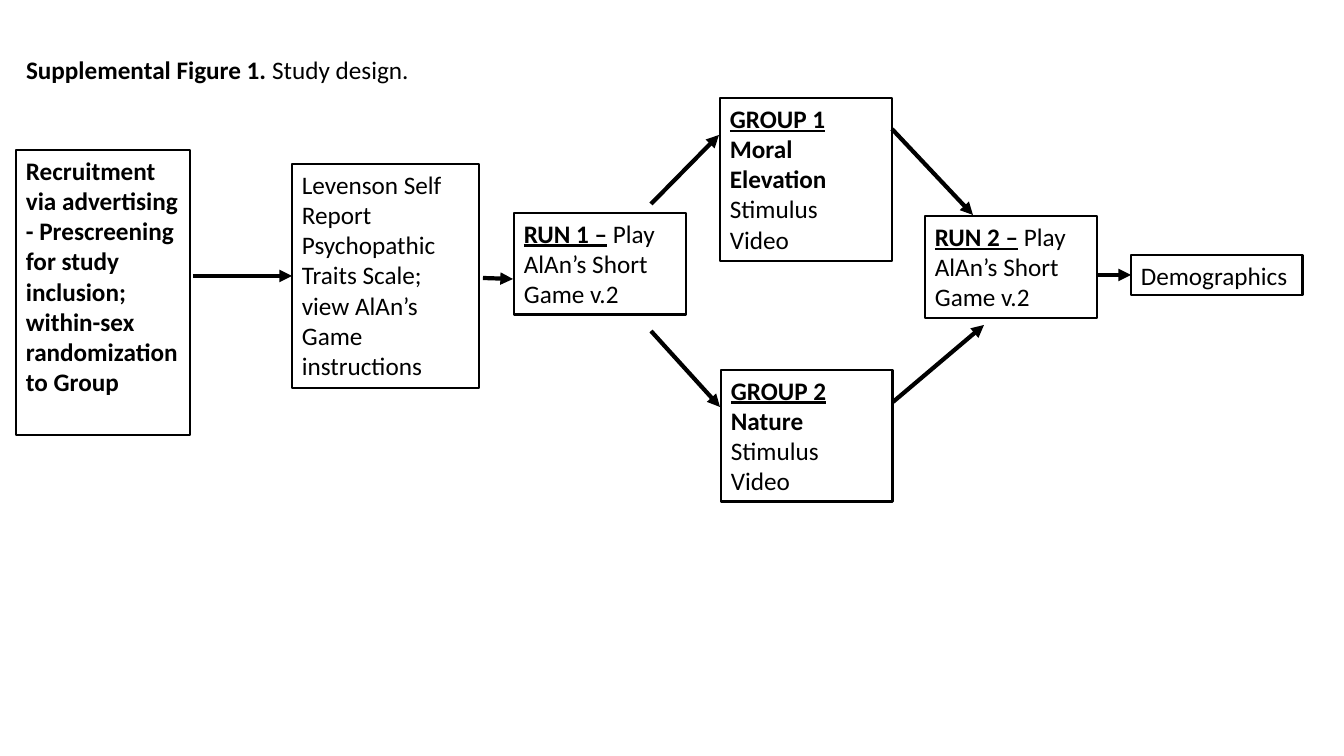
from lxml.etree import SubElement
from pptx import Presentation
from pptx.dml.color import RGBColor
from pptx.enum.shapes import MSO_CONNECTOR as CONN, MSO_SHAPE as SHAPE
from pptx.enum.text import MSO_ANCHOR as ANCHOR, PP_ALIGN as ALIGN
from pptx.oxml.ns import qn
from pptx.util import Pt

PX = 12192000 / 1344
BLACK = "000000"
BOLD = {"bold": True}
HEAD = {"bold": True, "underline": True}
PLAIN = {"bold": False}


def color(value):
    return RGBColor.from_string(value)


def write(sp, paragraphs, anchor):
    tf = sp.text_frame
    for name, value in {"word_wrap": True, "vertical_anchor": anchor}.items():
        setattr(tf, name, value)
    for i, runs in enumerate(paragraphs):
        p = tf.add_paragraph() if i else tf.paragraphs[0]
        p.alignment = ALIGN.LEFT
        for text, style in runs:
            r = p.add_run()
            r.text = text
            for name, value in {"name": "Calibri", "size": Pt(18), **style}.items():
                setattr(r.font, name, value)
            r.font.color.rgb = color(BLACK)


prs = Presentation()
prs.slide_width, prs.slide_height = round(1344 * PX), round(756 * PX)
s = prs.slides.add_slide(prs.slide_layouts[5])

title = s.shapes.title
place = {"left": 16, "top": -4, "width": 1123, "height": 146}
for name, value in place.items():
    setattr(title, name, round(value * PX))
write(title, [[("Supplemental Figure 1. ", BOLD), ("Study design.", PLAIN)]], ANCHOR.MIDDLE)

game = (" Play AlAn’s Short Game v.2", PLAIN)
video = ("Stimulus Video", PLAIN)
steps = {
    "recruitment": ((16, 150, 174, 285), [[(
        "Recruitment via advertising - Prescreening for study inclusion; "
        "within-sex randomization to Group", BOLD)]]),
    "scale": ((292, 164, 187, 224), [[(
        "Levenson Self Report Psychopathic Traits Scale; "
        "view AlAn’s Game instructions", PLAIN)]]),
    "run 1": ((514, 213, 172, 102), [[("RUN 1 –", HEAD), game]]),
    "group 1": ((720, 98, 172, 163), [[("GROUP 1", HEAD)], [("Moral Elevation ", BOLD), video]]),
    "group 2": ((721, 370, 172, 132), [[("GROUP 2", HEAD)], [("Nature ", BOLD), video]]),
    "run 2": ((925, 216, 172, 102), [[("RUN 2 –", HEAD), game]]),
    "demographics": ((1131, 255, 172, 40), [[("Demographics", PLAIN)]]),
}
boxes = {}
for step, (box, paragraphs) in steps.items():
    sp = s.shapes.add_shape(SHAPE.RECTANGLE, *(round(v * PX) for v in box))
    sp.shadow.inherit = False
    sp.fill.background()
    sp.line.color.rgb = color(BLACK)
    sp.line.width = Pt(2)
    write(sp, paragraphs, ANCHOR.TOP)
    boxes[step] = sp

arrows = [
    (193, 276, 292, 276, "scale"),
    (483, 278, 513, 279, None),
    (651, 204, 719, 135, None),
    (651, 331, 720, 407, None),
    (892, 129, 973, 215, None),
    (893, 402, 984, 325, None),
    (1098, 275, 1131, 275, "demographics"),
]
for *ends, target in arrows:
    arrow = s.shapes.add_connector(CONN.STRAIGHT, *(round(v * PX) for v in ends))
    if target:
        arrow.end_connect(boxes[target], 1)
    arrow.line.color.rgb = color(BLACK)
    arrow.line.width = Pt(3)
    SubElement(arrow.line._get_or_add_ln(), qn("a:tailEnd"), type="triangle")
    SubElement(arrow._element.spPr, qn("a:effectLst"))

prs.save("out.pptx")
